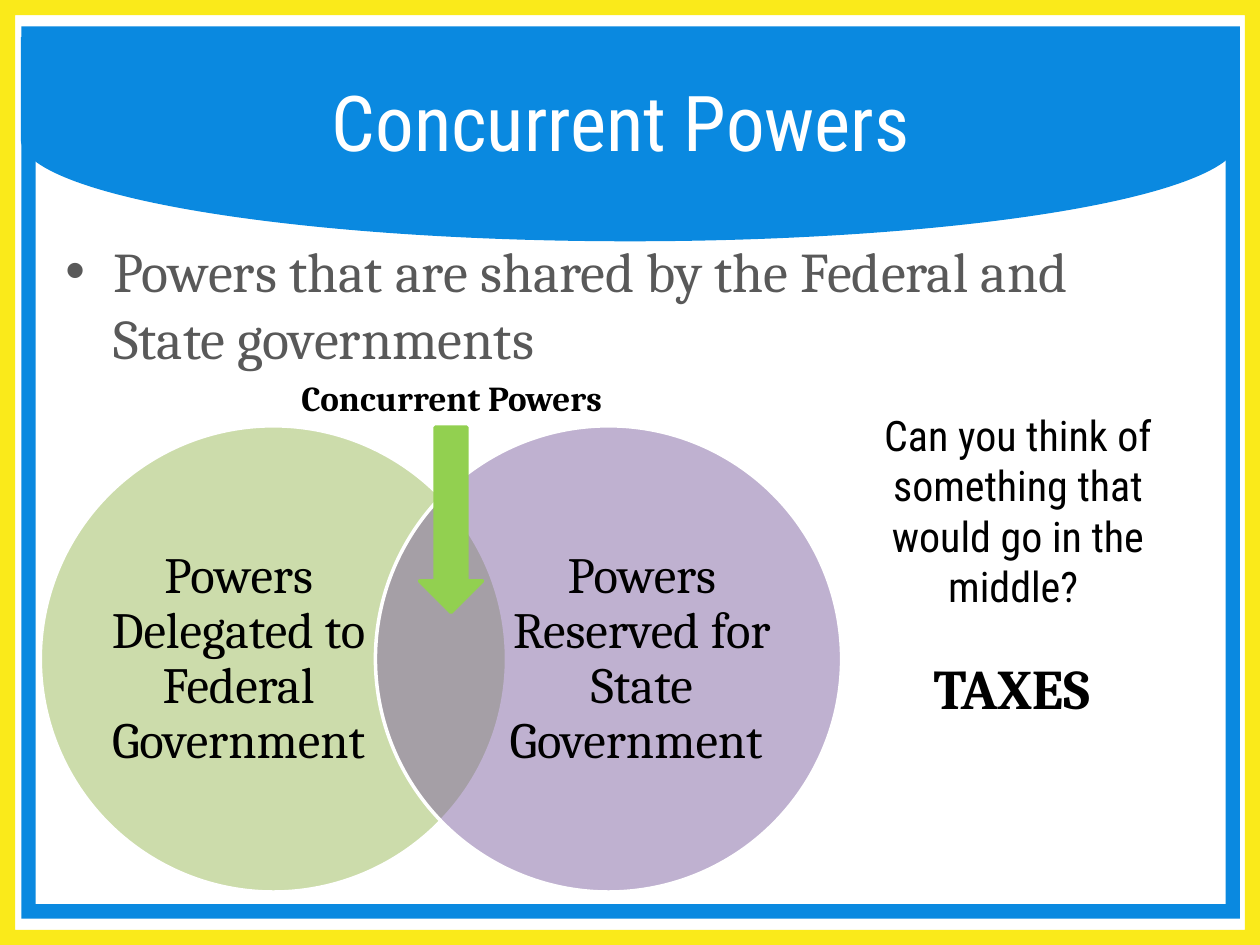
from dataclasses import dataclass

from lxml.etree import SubElement
from pptx import Presentation
from pptx.dml.color import RGBColor
from pptx.enum.shapes import MSO_SHAPE
from pptx.enum.text import MSO_ANCHOR, PP_ALIGN
from pptx.oxml.ns import qn
from pptx.util import Inches, Pt

COLUMNS, ROWS = 100, 75
CELL = Inches(10) // COLUMNS


@dataclass(frozen=True)
class Theme:
    blue: str = "0A89E0"
    yellow: str = "FAEA1A"
    white: str = "FFFFFF"
    black: str = "000000"
    grey: str = "595959"
    federal: str = "9BBB59"
    state: str = "8064A2"
    arrow: str = "92D050"
    sans: str = "Roboto Condensed"
    serif: str = "Cambria"
    title: int = 44
    body: int = 32
    circle: int = 29
    question: int = 24
    label: int = 20


THEME = Theme()


@dataclass(frozen=True)
class Box:
    """A region measured in grid columns and rows."""
    column: float
    row: float
    columns: float
    rows: float

    def inner(self, column, row, columns, rows):
        return Box(self.column + column, self.row + row, columns, rows)

    def lengths(self):
        return [round(value * CELL)
                for value in (self.column, self.row, self.columns, self.rows)]


def add_filled_shape(slide, kind, box, color, line=None, opacity=None):
    shape = slide.shapes.add_shape(kind, *box.lengths())
    shape.shadow.inherit = False
    shape.fill.solid()
    shape.fill.fore_color.rgb = RGBColor.from_string(color)
    if opacity is not None:
        color_element = shape.fill._xPr.find(qn("a:solidFill"))[0]
        SubElement(color_element, qn("a:alpha"), val=str(opacity * 1000))
    if line:
        shape.line.color.rgb = RGBColor.from_string(line)
        shape.line.width = Pt(2)
    else:
        shape.line.fill.background()
    return shape


def add_text_frame(slide, box, anchor=MSO_ANCHOR.TOP, inset=True):
    frame = slide.shapes.add_textbox(*box.lengths()).text_frame
    frame.word_wrap = True
    frame.vertical_anchor = anchor
    if not inset:
        frame.margin_left = frame.margin_right = 0
        frame.margin_top = frame.margin_bottom = 0
    return frame


def write(paragraph, text, size, font, color, bold=False,
          alignment=PP_ALIGN.CENTER):
    paragraph.alignment = alignment
    run = paragraph.add_run()
    run.text = text
    run.font.size = Pt(size)
    run.font.name = font
    run.font.bold = bold
    run.font.color.rgb = RGBColor.from_string(color)


def add_backdrop(slide, box):
    # Curved banner: a delay symbol turned to point down
    width, height = 96.7, 16.2
    middle_row = 11.05
    banner = add_filled_shape(
        slide, MSO_SHAPE.FLOWCHART_DELAY,
        box.inner((box.columns - height) / 2, middle_row - width / 2,
                  height, width), THEME.blue)
    banner.rotation = 90
    # Outer and inner borders
    borders = ((box, THEME.yellow),
               (box.inner(1.7, 2.1, width, 70.8), THEME.blue))
    for border_box, color in borders:
        border = add_filled_shape(slide, MSO_SHAPE.FRAME, border_box, color)
        border.adjustments[0] = 0.016


def add_title(slide, box):
    frame = add_text_frame(slide, box, MSO_ANCHOR.MIDDLE)
    write(frame.paragraphs[0], "Concurrent Powers ",
          THEME.title, THEME.sans, THEME.white)


def add_definition(slide, box):
    paragraph = add_text_frame(slide, box).paragraphs[0]
    properties = paragraph._p.get_or_add_pPr()
    indent = Inches(0.38)
    properties.set("marL", str(indent))
    properties.set("indent", str(-indent))
    SubElement(properties, qn("a:buFont"), typeface="Arial")
    SubElement(properties, qn("a:buChar"), char="•")
    write(paragraph,
          "Powers that are shared by the Federal and State governments",
          THEME.body, THEME.serif, THEME.grey, alignment=PP_ALIGN.LEFT)


def add_venn(slide, box):
    diameter, step, top = 37, 26.6, 4.4
    circles = (
        ("Powers Delegated to Federal Government", THEME.federal, 5.1),
        ("Powers Reserved for State Government ", THEME.state, 10.5),
    )
    # Overlapping circles with their captions
    for index, (text, color, text_offset) in enumerate(circles):
        circle = box.inner(index * step, top, diameter, diameter)
        add_filled_shape(slide, MSO_SHAPE.OVAL, circle, color,
                         THEME.white, opacity=50)
        caption = circle.inner(text_offset, 4.4, 21.3, 28.3)
        frame = add_text_frame(slide, caption, MSO_ANCHOR.MIDDLE, inset=False)
        paragraph = frame.paragraphs[0]
        paragraph.line_spacing = 0.9
        write(paragraph, text, THEME.circle, THEME.serif, THEME.black)
    # Arrow into the overlap, with its label
    add_filled_shape(slide, MSO_SHAPE.DOWN_ARROW,
                     box.inner(30.1, top + 0.1, 5, 14.7),
                     THEME.arrow, THEME.arrow)
    label = add_text_frame(slide, box.inner(19.3, 0, 26.7, top))
    write(label.paragraphs[0], "Concurrent Powers",
          THEME.label, THEME.serif, THEME.black, bold=True)


def add_question(slide, box):
    frame = add_text_frame(slide, box)
    write(frame.paragraphs[0],
          "Can you think of something that would go in the middle? ",
          THEME.question, THEME.sans, THEME.black)
    answer = frame.add_paragraph()
    answer.space_before = Pt(24)
    write(answer, "TAXES ", THEME.body, THEME.serif, THEME.black, bold=True)


def main():
    presentation = Presentation()
    presentation.slide_width = COLUMNS * CELL
    presentation.slide_height = ROWS * CELL
    slide = presentation.slides.add_slide(presentation.slide_layouts[6])
    page = Box(0, 0, COLUMNS, ROWS)
    add_backdrop(slide, page)
    add_title(slide, page.inner(5, 3.3, 90, 12.5))
    add_definition(slide, page.inner(4.2, 18.3, 90, 41.7))
    add_venn(slide, page.inner(3.2, 29.4, 63.6, 41.4))
    add_question(slide, page.inner(65.8, 32, 30, 25.2))
    presentation.save("out.pptx")


if __name__ == "__main__":
    main()
